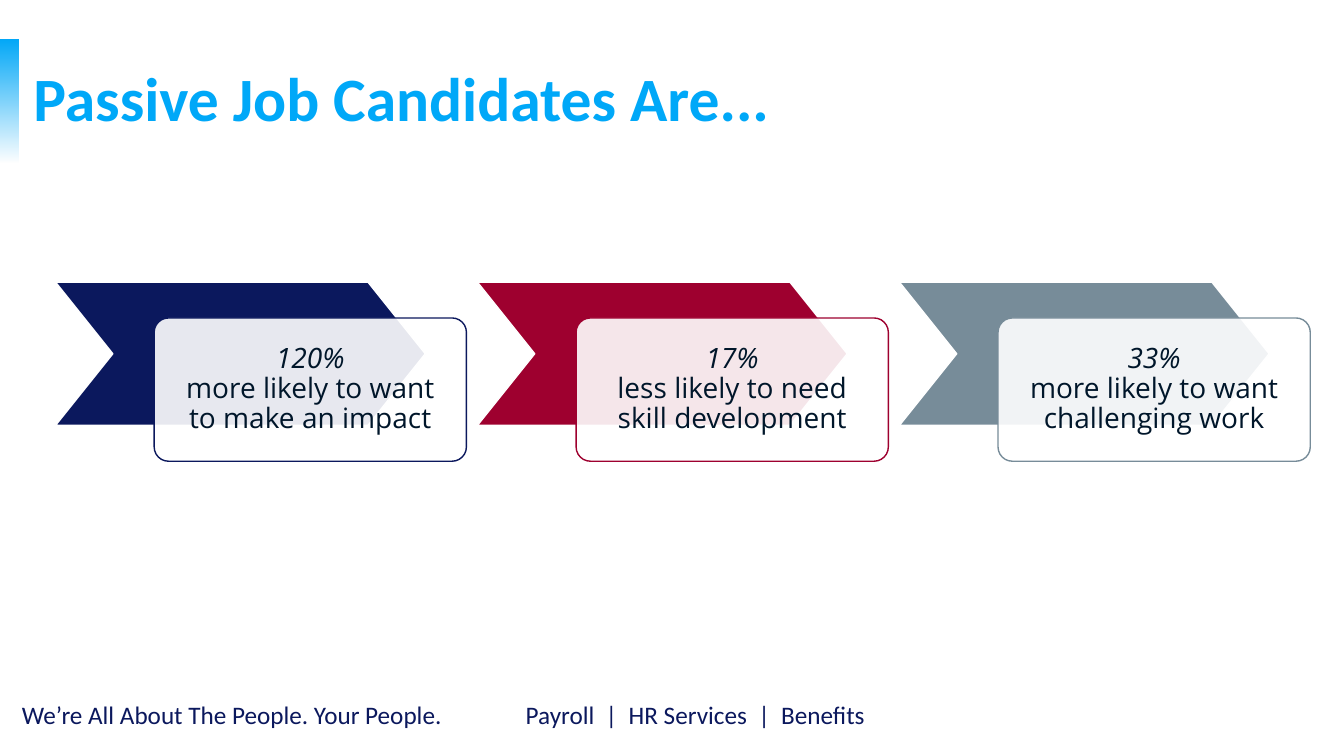
from lxml import etree
from pptx import Presentation
from pptx.dml.color import RGBColor
from pptx.enum.shapes import MSO_SHAPE as SHAPE
from pptx.enum.text import MSO_ANCHOR as ANCHOR, PP_ALIGN as ALIGN
from pptx.oxml.ns import qn
from pptx.util import Cm, Pt

SKY, NAVY, RED, GREY, INK, WHITE = "00A8F8", "0B185D", "9E002F", "778C99", "00162A", "FFFFFF"
STEPS = [
    ("120%", "more likely to want to make an impact", NAVY),
    ("17%", "less likely to need skill development", RED),
    ("33%", "more likely to want challenging work", GREY),
]


def rgb(value):
    """Turn a hex string into a colour."""
    return RGBColor.from_string(value)


def set_alpha(color_parent, percent):
    """Set the opacity of the colour inside an XML element."""
    color = next(color_parent.iter(qn("a:srgbClr")))
    etree.SubElement(color, qn("a:alpha")).set("val", str(percent * 1000))


def add_run(p, text, size, color, font="Calibri", bold=False, italic=False):
    """Append a formatted run to a paragraph."""
    r = p.add_run()
    r.text = text
    r.font.name, r.font.size = font, Pt(size)
    r.font.bold, r.font.italic = bold, italic
    r.font.color.rgb = rgb(color)


def add_preset(s, preset, x, y, w, h, fill, line=None, adj=None):
    """Draw a preset shape measured in centimetres."""
    sp = s.shapes.add_shape(preset, Cm(x), Cm(y), Cm(w), Cm(h))
    sp.shadow.inherit = False
    sp.fill.solid()
    sp.fill.fore_color.rgb = rgb(fill)
    if line:
        sp.line.color.rgb = rgb(line)
        sp.line.width = Pt(1)
    else:
        sp.line.fill.background()
    if adj is not None:
        sp.adjustments[0] = adj
    return sp


def add_header(s, x, y, w, h):
    """Place the fading accent bar and the title beside it."""
    bar = add_preset(s, SHAPE.RECTANGLE, x, y, 0.48, h, SKY)
    bar.fill.gradient()
    bar.fill.gradient_angle = 90
    for stop in bar.fill.gradient_stops:
        stop.color.rgb = rgb(SKY)
    set_alpha(bar.fill._xPr, 0)

    tf = s.shapes.add_textbox(Cm(x + 0.86), Cm(y), Cm(w - 0.86), Cm(h)).text_frame
    tf.word_wrap = True
    tf.vertical_anchor = ANCHOR.MIDDLE
    tf.margin_left = tf.margin_right = tf.margin_top = tf.margin_bottom = 0
    p = tf.paragraphs[0]
    p.line_spacing = 0.9
    add_run(p, "Passive Job Candidates Are...", 44, SKY, bold=True)


def add_step(s, x, y, w, h, figure, claim, color):
    """Place a chevron with its overlapping caption card."""
    add_preset(s, SHAPE.CHEVRON, x, y, 0.9 * w, h, color, WHITE, 0.4)
    card = add_preset(s, SHAPE.ROUNDED_RECTANGLE, x + 0.24 * w, y + h / 4,
                      0.76 * w, h, WHITE, color, 0.1)
    set_alpha(card.fill._xPr, 90)
    tf = card.text_frame
    tf.word_wrap = True
    tf.vertical_anchor = ANCHOR.MIDDLE
    tf.margin_left = tf.margin_right = tf.margin_top = tf.margin_bottom = Cm(0.4)
    p = tf.paragraphs[0]
    p.alignment = ALIGN.CENTER
    p.line_spacing = 0.9
    p.space_after = Pt(7)
    add_run(p, figure, 20, INK, "Open Sans", italic=True)
    p.add_line_break()
    add_run(p, claim, 20, INK, "Open Sans")


def add_steps(s, x, y, w, h):
    """Spread the steps evenly over the box."""
    gap = 0.28
    step_w = (w - gap * (len(STEPS) - 1)) / len(STEPS)
    for i, step in enumerate(STEPS):
        add_step(s, x + i * (step_w + gap), y, step_w, h, *step)


def add_footer(s, x, y, w, h):
    """Place the slogan and the services on one tabbed line."""
    tf = s.shapes.add_textbox(Cm(x), Cm(y), Cm(w), Cm(h)).text_frame
    tf.word_wrap = True
    p = tf.paragraphs[0]
    tabs = etree.SubElement(p._p.get_or_add_pPr(), qn("a:tabLst"))
    tab = etree.SubElement(tabs, qn("a:tab"))
    tab.set("pos", str(Cm(12.7)))
    tab.set("algn", "l")
    add_run(p, "We’re All About The People. Your People.", 18, NAVY)
    add_run(p, "\tPayroll  |  HR Services  |  Benefits", 18, NAVY)


def main():
    """Build the slide and save it."""
    prs = Presentation()
    prs.slide_width, prs.slide_height = Cm(33.87), Cm(19.05)
    s = prs.slides.add_slide(prs.slide_layouts[6])
    add_header(s, -0.02, 1, 32.84, 3.12)
    add_footer(s, 0.3, 17.5, 22.99, 1.02)
    add_steps(s, 1.4, 7.11, 31.62, 3.61)
    prs.save("out.pptx")


if __name__ == "__main__":
    main()
